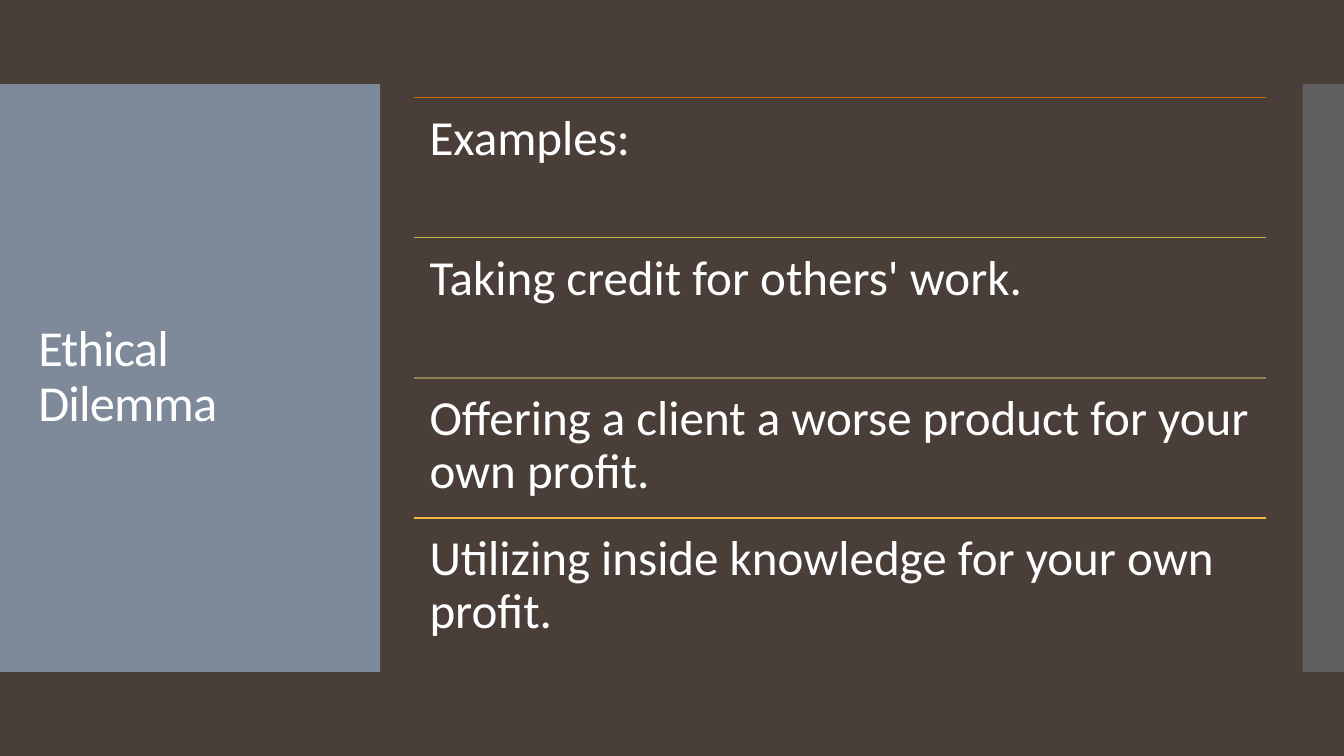
from dataclasses import dataclass

from lxml import etree
from pptx import Presentation
from pptx import util as u
from pptx.dml.color import RGBColor
from pptx.enum import shapes, text
from pptx.oxml.ns import qn

WIDE, HIGH = 13.33, 7.5
FONT, WHITE = "Calibri", "FFFFFF"
LEFT, TOP, SPAN, STEP = 4.11, 0.97, 8.45, 1.39


@dataclass
class Panel:
    left: float
    width: float
    alpha: int


@dataclass
class Row:
    words: str
    line: str


PANELS = [Panel(0, 3.77, 95), Panel(12.92, WIDE - 12.92, 40)]
ROWS = [
    Row("Examples:", "D26400"),
    Row("Taking credit for others' work.", "C3BA45"),
    Row("Offering a client a worse product for your own profit.", "8A8552"),
    Row("Utilizing inside knowledge for your own profit.", "F3B843"),
]


def paint(color, code: str) -> None:
    color.rgb = RGBColor.from_string(code)


def box(*sides: float) -> list[int]:
    return [u.Inches(side) for side in sides]


def write(frame, words: str, size: float):
    """Fill the frame with one left-aligned run and return that run."""
    frame.word_wrap = True
    frame.auto_size = text.MSO_AUTO_SIZE.NONE
    para = frame.paragraphs[0]
    para.alignment = text.PP_ALIGN.LEFT
    para.line_spacing = 0.9
    run = para.add_run()
    run.text = words
    run.font.name = FONT
    run.font.size = u.Pt(size)
    paint(run.font.color, WHITE)
    return run


def draw_panel(slide, panel: Panel) -> None:
    shape = slide.shapes.add_shape(
        shapes.MSO_SHAPE.RECTANGLE,
        *box(panel.left, HIGH / 9, panel.width, HIGH * 7 / 9))
    shape.shadow.inherit = False
    shape.line.fill.background()
    shape.fill.solid()
    paint(shape.fill.fore_color, "818E9F")
    tint = shape.element.spPr.find(qn("a:solidFill"))[0]
    etree.SubElement(tint, qn("a:alpha"), val=str(panel.alpha * 1000))


def draw_title(slide) -> None:
    title = slide.shapes.title
    title.left, title.top, title.width, title.height = box(0.28, 1.23, 3.22, 5.03)
    title.text_frame.vertical_anchor = text.MSO_ANCHOR.MIDDLE
    run = write(title.text_frame, "Ethical Dilemma", 36)
    run.font._element.set("spc", "-60")
    # The title belongs in front of the panels.
    title.element.getparent().append(title.element)


def draw_row(slide, row: Row, top: float) -> None:
    rule = slide.shapes.add_connector(
        shapes.MSO_CONNECTOR.STRAIGHT, *box(LEFT, top, LEFT + SPAN, top))
    rule.line.width = u.Pt(0.85)
    paint(rule.line.color, row.line)
    etree.SubElement(rule.element.spPr, qn("a:effectLst"))

    frame = slide.shapes.add_textbox(*box(LEFT, top, SPAN, STEP)).text_frame
    frame.margin_left = frame.margin_right = u.Inches(0.15)
    frame.margin_top = frame.margin_bottom = u.Inches(0.15)
    write(frame, row.words, 35)


def main() -> None:
    deck = Presentation()
    deck.slide_width, deck.slide_height = box(WIDE, HIGH)
    slide = deck.slides.add_slide(deck.slide_layouts[5])
    slide.background.fill.solid()
    paint(slide.background.fill.fore_color, "4A3F38")
    for panel in PANELS:
        draw_panel(slide, panel)
    draw_title(slide)
    for at, row in enumerate(ROWS):
        draw_row(slide, row, TOP + at * STEP)
    deck.save("out.pptx")


if __name__ == "__main__":
    main()
